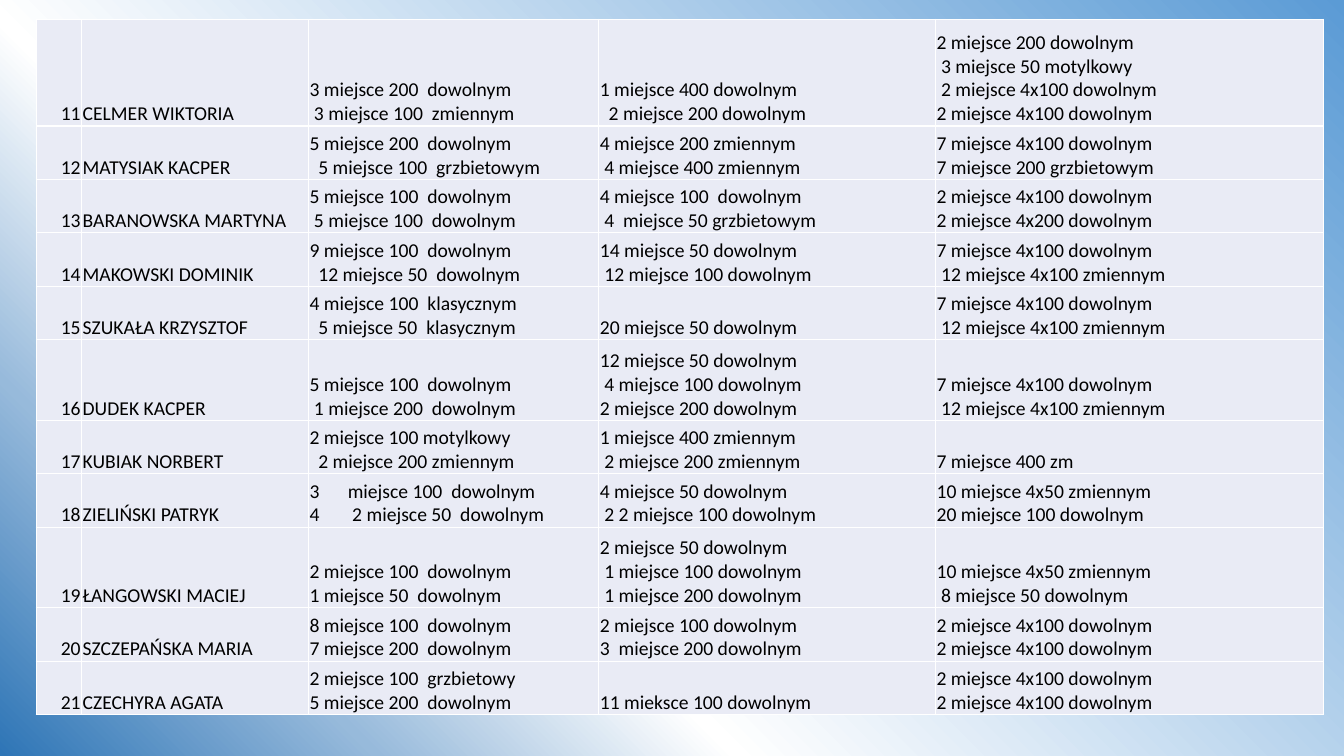
import dataclasses

import pptx
import pptx.dml.color
import pptx.enum.text
import pptx.oxml
import pptx.oxml.ns
import pptx.util

EMU_PER_PX = 9144
NS = pptx.oxml.ns.nsdecls("a", "p")
LEFT, TOP = 36, 19
COLUMNS = (45, 225, 288, 334, 385)
HEIGHT_BY_LINES = {2: 53, 3: 80, 4: 106}
FONT = {"name": "Calibri", "size": pptx.util.Pt(14)}
CELL = {
    "margin_left": EMU_PER_PX,
    "margin_right": EMU_PER_PX,
    "margin_top": EMU_PER_PX,
    "margin_bottom": 0,
    "vertical_anchor": pptx.enum.text.MSO_ANCHOR.BOTTOM,
}
FLAGS = {"first_row": False, "horz_banding": False}
GRADIENT = ((0, "2E75B6"), (18, "97BADB"), (35, "FFFFFF"), (100, "5B9BD5"))


@dataclasses.dataclass(frozen=True)
class Swimmer:
    name: str
    results: tuple[str, str, str]
    list_start: int = 0


SWIMMERS = (
    Swimmer("CELMER WIKTORIA", (
        "3 miejsce 200  dowolnym\n 3 miejsce 100  zmiennym",
        "1 miejsce 400 dowolnym\n  2 miejsce 200 dowolnym",
        "2 miejsce 200 dowolnym\n 3 miejsce 50 motylkowy\n"
        " 2 miejsce 4x100 dowolnym\n2 miejsce 4x100 dowolnym")),
    Swimmer("MATYSIAK KACPER", (
        "5 miejsce 200  dowolnym\n  5 miejsce 100  grzbietowym",
        "4 miejsce 200 zmiennym\n 4 miejsce 400 zmiennym",
        "7 miejsce 4x100 dowolnym\n7 miejsce 200 grzbietowym")),
    Swimmer("BARANOWSKA MARTYNA", (
        "5 miejsce 100  dowolnym\n 5 miejsce 100  dowolnym",
        "4 miejsce 100  dowolnym\n 4  miejsce 50 grzbietowym",
        "2 miejsce 4x100 dowolnym\n2 miejsce 4x200 dowolnym")),
    Swimmer("MAKOWSKI DOMINIK", (
        "9 miejsce 100  dowolnym\n  12 miejsce 50  dowolnym",
        "14 miejsce 50 dowolnym\n 12 miejsce 100 dowolnym",
        "7 miejsce 4x100 dowolnym\n 12 miejsce 4x100 zmiennym")),
    Swimmer("SZUKAŁA KRZYSZTOF", (
        "4 miejsce 100  klasycznym\n  5 miejsce 50  klasycznym",
        "20 miejsce 50 dowolnym",
        "7 miejsce 4x100 dowolnym\n 12 miejsce 4x100 zmiennym")),
    Swimmer("DUDEK KACPER", (
        "5 miejsce 100  dowolnym\n 1 miejsce 200  dowolnym",
        "12 miejsce 50 dowolnym\n 4 miejsce 100 dowolnym\n2 miejsce 200 dowolnym",
        "7 miejsce 4x100 dowolnym\n 12 miejsce 4x100 zmiennym")),
    Swimmer("KUBIAK NORBERT", (
        "2 miejsce 100 motylkowy\n  2 miejsce 200 zmiennym",
        "1 miejsce 400 zmiennym\n 2 miejsce 200 zmiennym",
        "7 miejsce 400 zm")),
    Swimmer("ZIELIŃSKI PATRYK", (
        "miejsce 100  dowolnym\n 2 miejsce 50  dowolnym",
        "4 miejsce 50 dowolnym\n 2 2 miejsce 100 dowolnym",
        "10 miejsce 4x50 zmiennym\n20 miejsce 100 dowolnym"), list_start=3),
    Swimmer("ŁANGOWSKI MACIEJ", (
        "2 miejsce 100  dowolnym\n1 miejsce 50  dowolnym",
        "2 miejsce 50 dowolnym\n 1 miejsce 100 dowolnym\n 1 miejsce 200 dowolnym",
        "10 miejsce 4x50 zmiennym\n 8 miejsce 50 dowolnym")),
    Swimmer("SZCZEPAŃSKA MARIA", (
        "8 miejsce 100  dowolnym\n7 miejsce 200  dowolnym",
        "2 miejsce 100 dowolnym\n3  miejsce 200 dowolnym",
        "2 miejsce 4x100 dowolnym\n2 miejsce 4x100 dowolnym")),
    Swimmer("CZECHYRA AGATA", (
        "2 miejsce 100  grzbietowy\n5 miejsce 200  dowolnym",
        "11 mieksce 100 dowolnym",
        "2 miejsce 4x100 dowolnym\n2 miejsce 4x100 dowolnym")),
)


def px(n: int) -> int:
    return pptx.util.Emu(n * EMU_PER_PX)


def apply(target, values: dict) -> None:
    for key, value in values.items():
        setattr(target, key, value)


def set_color(fill, color: str) -> None:
    fill.solid()
    fill.fore_color.rgb = pptx.dml.color.RGBColor.from_string(color)


def set_background(s) -> None:
    stops = "".join(
        f'<a:gs pos="{pos * 1000}"><a:srgbClr val="{color}"/></a:gs>'
        for pos, color in GRADIENT)
    s.element.cSld.insert(0, pptx.oxml.parse_xml(
        f'<p:bg {NS}><p:bgPr><a:gradFill rotWithShape="1"><a:gsLst>{stops}</a:gsLst>'
        '<a:path path="circle"><a:fillToRect t="100000" r="100000"/></a:path>'
        '</a:gradFill><a:effectLst/></p:bgPr></p:bg>'))


def add_borders(cell) -> None:
    tcPr = cell._tc.get_or_add_tcPr()
    for side in "LRTB":
        tcPr.append(pptx.oxml.parse_xml(
            f'<a:ln{side} {NS} w="12700"><a:solidFill><a:srgbClr val="FFFFFF"/>'
            f'</a:solidFill></a:ln{side}>'))


def number_paragraph(p, start: int) -> None:
    pPr = p._p.get_or_add_pPr()
    pPr.set("marL", str(px(38)))
    pPr.set("indent", str(-px(38)))
    pPr.append(pptx.oxml.parse_xml(
        f'<a:buFont {NS} typeface="+mj-lt"/>'))
    pPr.append(pptx.oxml.parse_xml(
        f'<a:buAutoNum {NS} type="arabicPlain" startAt="{start}"/>'))


def fill_cell(cell, text: str, align, list_start: int = 0) -> None:
    apply(cell, CELL)
    add_borders(cell)
    set_color(cell.fill, "E9EBF5")
    tf = cell.text_frame
    tf.text = text
    for p in tf.paragraphs:
        p.alignment = align
        if list_start:
            number_paragraph(p, list_start)
        for r in p.runs:
            apply(r.font, FONT)
            set_color(r.font.fill, "000000")


def add_results(s) -> None:
    heights = [HEIGHT_BY_LINES[max(len(text.split("\n")) for text in swimmer.results)]
               for swimmer in SWIMMERS]
    table = s.shapes.add_table(
        len(SWIMMERS), len(COLUMNS), px(LEFT), px(TOP),
        px(sum(COLUMNS)), px(sum(heights))).table
    apply(table, FLAGS)
    for column, width in zip(table.columns, COLUMNS):
        column.width = px(width)
    for i, (swimmer, height) in enumerate(zip(SWIMMERS, heights)):
        table.rows[i].height = px(height)
        for j, text in enumerate((str(11 + i), swimmer.name, *swimmer.results)):
            align = pptx.enum.text.PP_ALIGN.LEFT if j else pptx.enum.text.PP_ALIGN.RIGHT
            fill_cell(table.cell(i, j), text, align, swimmer.list_start if j == 2 else 0)


def main() -> None:
    prs = pptx.Presentation()
    apply(prs, {"slide_width": px(1333), "slide_height": px(750)})
    s = prs.slides.add_slide(prs.slide_layouts[6])
    set_background(s)
    add_results(s)
    prs.save("out.pptx")


if __name__ == "__main__":
    main()
